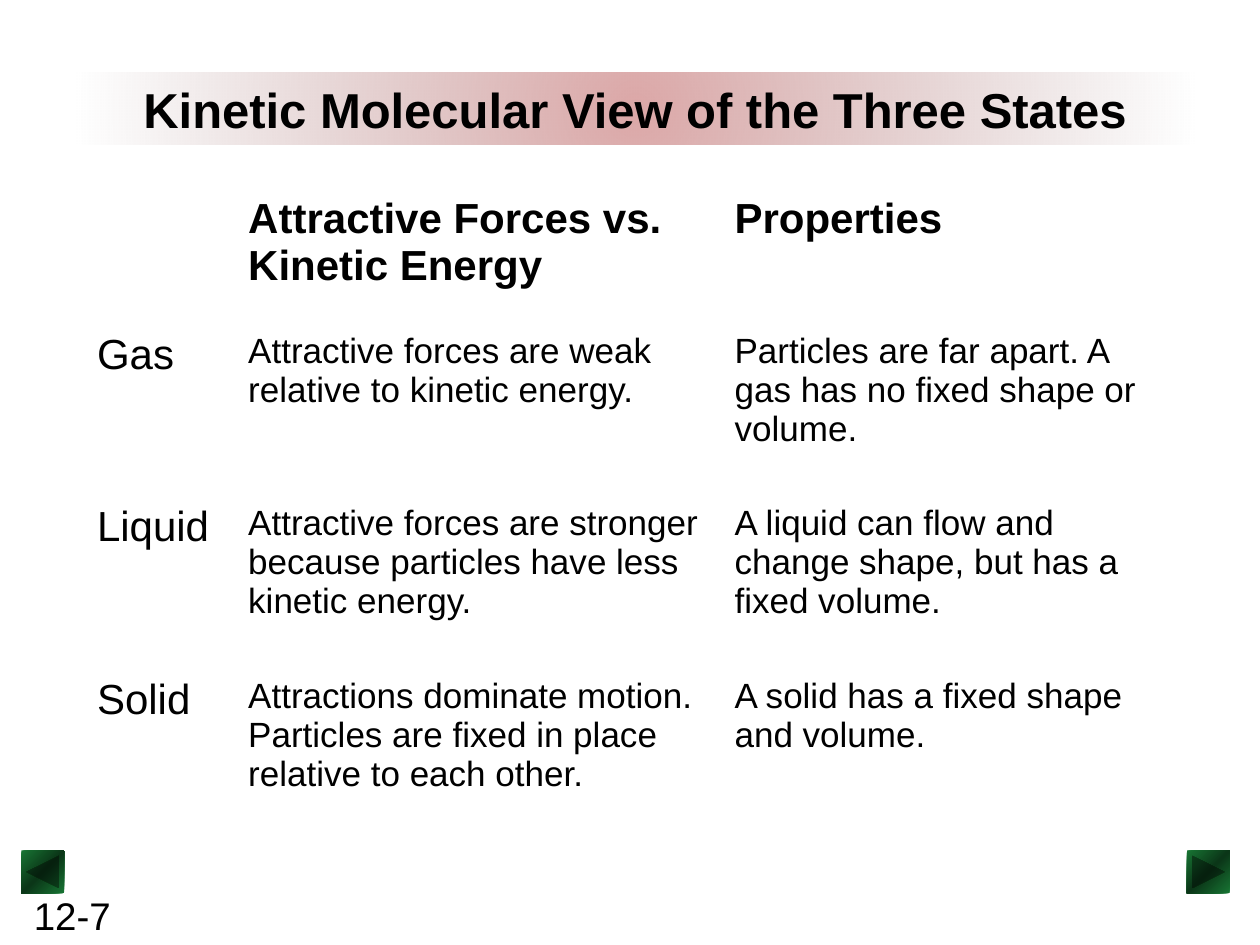
from lxml.etree import SubElement
from pptx import Presentation
from pptx.dml.color import RGBColor
from pptx.enum.shapes import MSO_SHAPE
from pptx.enum.text import PP_ALIGN
from pptx.oxml.ns import qn
from pptx.util import Inches, Pt

BLACK, WHITE = "000000", "FFFFFF"
COLS = [1.2, 3.86, 3.69]
ROWS = [1.08, 1.37, 1.37, 1.37]
STATES = [
    ["", "Attractive Forces vs. Kinetic Energy", "Properties"],
    ["Gas", "Attractive forces are weak relative to kinetic energy.",
     "Particles are far apart. A gas has no fixed shape or volume."],
    ["Liquid", "Attractive forces are stronger because particles have less kinetic energy.",
     "A liquid can flow and change shape, but has a fixed volume."],
    ["Solid", "Attractions dominate motion. Particles are fixed in place relative to each other.",
     "A solid has a fixed shape and volume."],
]


def rgb(value):
    """Turn a hex string into a colour."""
    return RGBColor.from_string(value)


def write(tf, text, size=20, bold=False, align=PP_ALIGN.LEFT):
    """Put one formatted run in a text frame."""
    tf.word_wrap = True
    p = tf.paragraphs[0]
    p.alignment = align
    r = p.add_run()
    r.text = text
    r.font.name, r.font.size, r.font.bold = "Arial", Pt(size), bold
    r.font.color.rgb = rgb(BLACK)


def gradient(sp, stops, angle=None):
    """Fill a shape with (percent, colour, opacity) stops, radial without an angle."""
    sp.fill.gradient()
    grad = sp._element.spPr.find(qn("a:gradFill"))
    for child in list(grad):
        grad.remove(child)
    gs_list = SubElement(grad, qn("a:gsLst"))
    for pos, color, opacity in stops:
        gs = SubElement(gs_list, qn("a:gs"), pos=str(pos * 1000))
        clr = SubElement(gs, qn("a:srgbClr"), val=color)
        if opacity < 100:
            SubElement(clr, qn("a:alpha"), val=str(opacity * 1000))
    if angle is None:
        radial = SubElement(grad, qn("a:path"), path="circle")
        SubElement(radial, qn("a:fillToRect"), {side: "50000" for side in "ltrb"})
    else:
        SubElement(grad, qn("a:lin"), ang=str(angle * 60000), scaled="1")


def add_plain_shape(s, kind, x, y, w, h):
    """Add a preset shape without line or shadow."""
    sp = s.shapes.add_shape(kind, Inches(x), Inches(y), Inches(w), Inches(h))
    sp.shadow.inherit = False
    sp.line.fill.background()
    return sp


def add_title(s, x, y, w, h):
    """Add the title on its fading band."""
    sp = add_plain_shape(s, MSO_SHAPE.RECTANGLE, x, y, w, h)
    gradient(sp, [(0, "990000", 35), (100, "470000", 0)])
    write(sp.text_frame, "Kinetic Molecular View of the Three States",
          size=28, bold=True, align=PP_ALIGN.CENTER)


def add_button(s, kind, x, y, side):
    """Add a green navigation button."""
    sp = add_plain_shape(s, kind, x, y, side, side)
    gradient(sp, [(0, "187534", 100), (50, "0B3618", 100), (100, "187534", 100)], angle=45)


def add_page_number(s, x, y, w, h):
    """Add the chapter and page number."""
    tb = s.shapes.add_textbox(Inches(x), Inches(y), Inches(w), Inches(h))
    write(tb.text_frame, "12-7", size=22)


def set_borders(cell, **widths):
    """Draw white cell borders with the given widths in points."""
    tc_pr = cell._tc.get_or_add_tcPr()
    for i, side in enumerate("LRTB"):
        ln = tc_pr.makeelement(qn(f"a:ln{side}"), {"w": str(Pt(widths.get(side, 1)))})
        fill = SubElement(ln, qn("a:solidFill"))
        SubElement(fill, qn("a:srgbClr"), val=WHITE)
        tc_pr.insert(i, ln)


def add_states_table(s, x, y):
    """Add the table of the three states."""
    frame = s.shapes.add_table(len(ROWS), len(COLS), Inches(x), Inches(y),
                               Inches(sum(COLS)), Inches(sum(ROWS)))
    table = frame.table
    table.horz_banding = False
    for col, width in zip(table.columns, COLS):
        col.width = Inches(width)
    for i, (row, height) in enumerate(zip(table.rows, ROWS)):
        row.height = Inches(height)
        for j, cell in enumerate(row.cells):
            cell.fill.background()
            set_borders(cell, T=3 if i == 1 else 1, B=3 if i == 0 else 1)
            if STATES[i][j]:
                write(cell.text_frame, STATES[i][j],
                      size=24 if i == 0 or j == 0 else 20, bold=i == 0)


def main():
    """Build the slide and save it."""
    prs = Presentation()
    prs.slide_width, prs.slide_height = Inches(10), Inches(7.5)
    s = prs.slides.add_slide(prs.slide_layouts[6])
    add_page_number(s, 0.17, 7.03, 1.08, 0.47)
    add_button(s, MSO_SHAPE.ACTION_BUTTON_BACK_OR_PREVIOUS, 0.17, 6.75, 0.34)
    add_button(s, MSO_SHAPE.ACTION_BUTTON_FORWARD_OR_NEXT, 9.42, 6.75, 0.34)
    add_states_table(s, 0.67, 1.5)
    add_title(s, 0.58, 0.58, 8.92, 0.57)
    prs.save("out.pptx")


if __name__ == "__main__":
    main()
